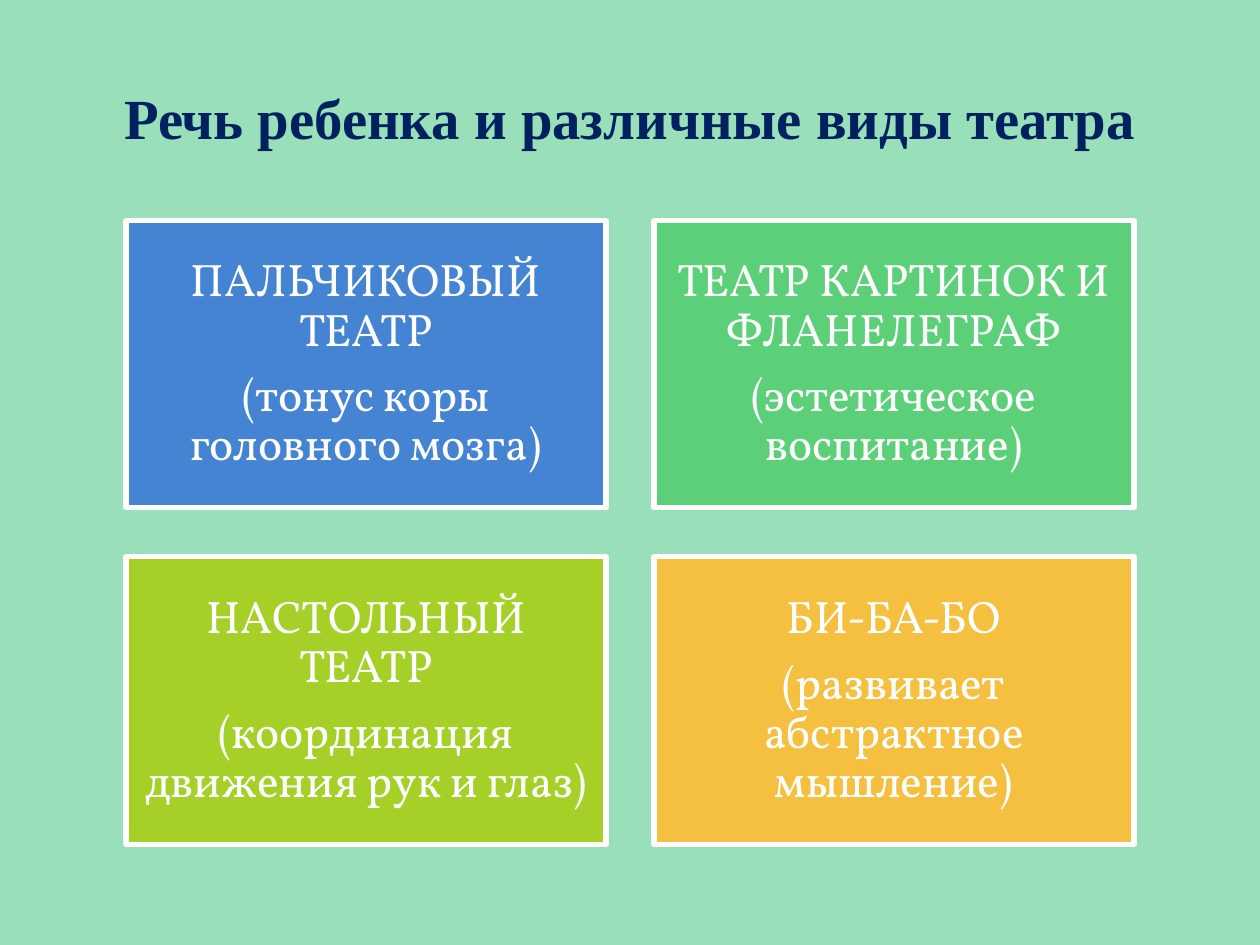
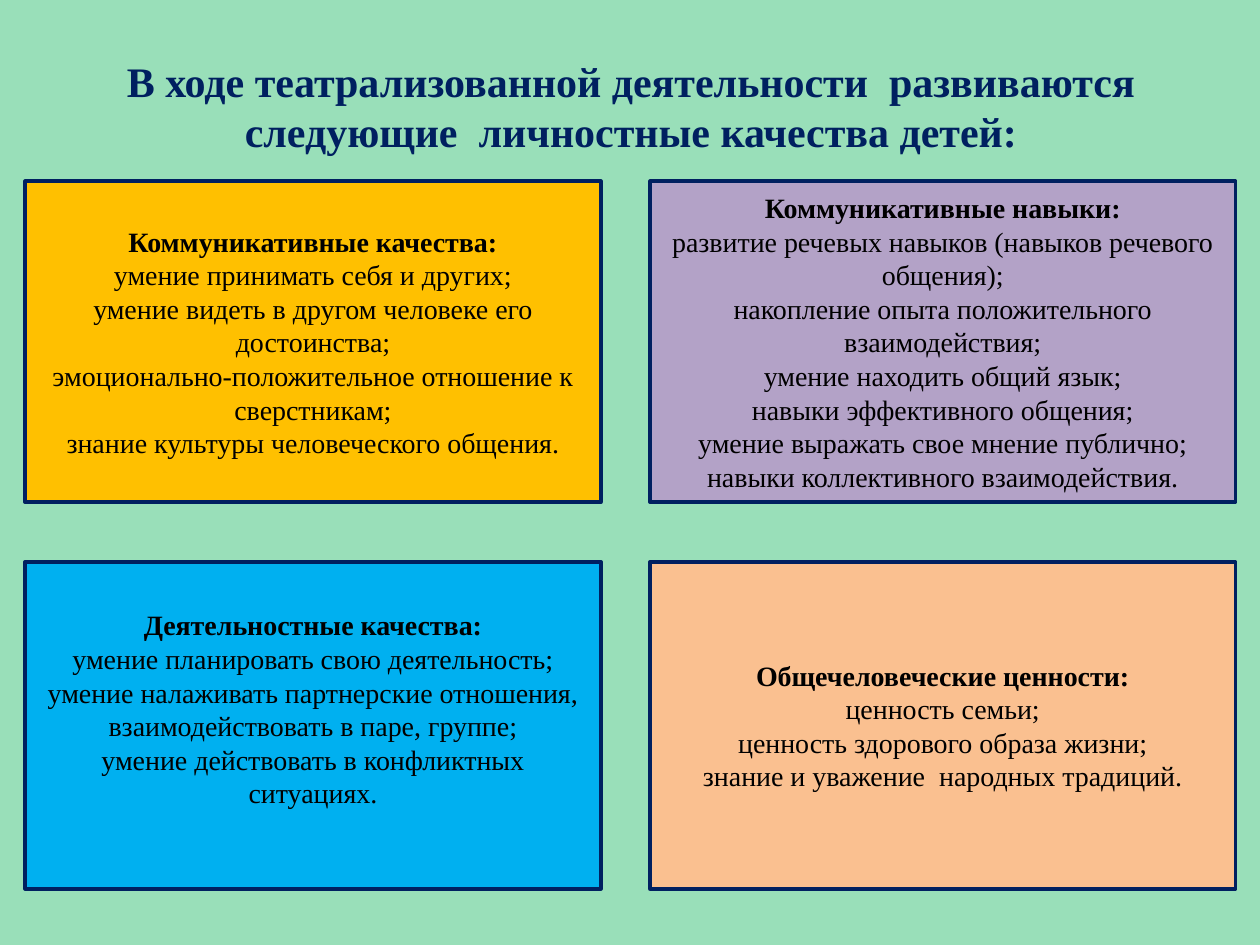
from dataclasses import dataclass
from itertools import product

from pptx import Presentation
from pptx.dml.color import RGBColor
from pptx.enum.shapes import MSO_SHAPE as Shape
from pptx.enum.text import MSO_ANCHOR as Anchor, PP_ALIGN as Align
from pptx.util import Pt


@dataclass(frozen=True)
class Theme:
    background: str = "99DFB9"
    navy: str = "002060"
    white: str = "FFFFFF"
    black: str = "000000"
    serif: str = "Times New Roman"
    card_font: str = "Vollkorn"
    main_title_size: float = 32.4
    long_title_size: float = 24
    card_size: float = 26
    list_size: float = 16


THEME = Theme()

THEATRES = [
    ("4584D3", "ПАЛЬЧИКОВЫЙ ТЕАТР", "(тонус коры головного мозга)"),
    ("5BD078", "ТЕАТР КАРТИНОК И ФЛАНЕЛЕГРАФ", "(эстетическое воспитание)"),
    ("A5D028", "НАСТОЛЬНЫЙ ТЕАТР", "(координация движения рук и глаз)"),
    ("F5C040", "БИ-БА-БО", "(развивает абстрактное мышление)"),
]

# Fill, extra bottom inset, heading, items
QUALITIES = [
    ("FFC000", 0, "Коммуникативные качества:", [
        "умение принимать себя и других;",
        "умение видеть в другом человеке его достоинства;",
        "эмоционально-положительное отношение к сверстникам;",
        "знание культуры человеческого общения."]),
    ("B3A2C7", 0, "Коммуникативные навыки:", [
        "развитие речевых навыков (навыков речевого общения);",
        "накопление опыта положительного взаимодействия;",
        "умение находить общий язык;",
        "навыки эффективного общения;",
        "умение выражать свое мнение публично;",
        "навыки коллективного взаимодействия."]),
    ("00B0F0", 19, "Деятельностные качества:", [
        "умение планировать свою деятельность;",
        "умение налаживать партнерские отношения, взаимодействовать в паре, группе;",
        "умение действовать в конфликтных ситуациях."]),
    ("FAC090", 0, "Общечеловеческие ценности:", [
        "ценность семьи;",
        "ценность здорового образа жизни;",
        "знание и уважение  народных традиций."]),
]


def rgb(code):
    return RGBColor.from_string(code)


def write(frame, lines, *, size, color, font=THEME.serif, bold_lines=0,
          insets=(7.2, 3.6, 7.2, 3.6), spacing=None, after=0):
    """Fill a frame with centred lines; the first bold_lines of them are bold."""
    frame.word_wrap = True
    frame.vertical_anchor = Anchor.MIDDLE
    (frame.margin_left, frame.margin_top,
     frame.margin_right, frame.margin_bottom) = map(Pt, insets)
    for index, line in enumerate(lines):
        paragraph = frame.paragraphs[0] if index == 0 else frame.add_paragraph()
        paragraph.alignment = Align.CENTER
        paragraph.space_after = Pt(after)
        if spacing:
            paragraph.line_spacing = spacing
        run = paragraph.add_run()
        run.text = line
        run.font.name = font
        run.font.size = Pt(size)
        run.font.bold = index < bold_lines
        run.font.color.rgb = rgb(color)


def add_titled_slide(deck, title, box, size):
    slide = deck.slides.add_slide(deck.slide_layouts[6])
    slide.background.fill.solid()
    slide.background.fill.fore_color.rgb = rgb(THEME.background)
    heading = slide.shapes.add_textbox(*map(Pt, box))
    write(heading.text_frame, [title], size=size, color=THEME.navy, bold_lines=1)
    return slide


def add_panel(slide, box, fill, border, border_width):
    panel = slide.shapes.add_shape(Shape.RECTANGLE, *map(Pt, box))
    panel.shadow.inherit = False
    panel.fill.solid()
    panel.fill.fore_color.rgb = rgb(fill)
    panel.line.color.rgb = rgb(border)
    panel.line.width = Pt(border_width)
    return panel.text_frame


def grid(columns, rows):
    """Boxes, row by row, from (left, width) columns and (top, height) rows."""
    return [(left, top, width, height)
            for (top, height), (left, width) in product(rows, columns)]


def build_theatres(deck):
    slide = add_titled_slide(deck, "Речь ребенка и различные виды театра",
                             (36, 21.6, 648, 90), THEME.main_title_size)
    boxes = grid([(72, 274.3), (373.7, 274.3)], [(126, 164.2), (318.2, 164.2)])
    for box, (fill, *lines) in zip(boxes, THEATRES):
        frame = add_panel(slide, box, fill, THEME.white, 3)
        write(frame, lines, size=THEME.card_size, color=THEME.white,
              font=THEME.card_font, insets=(7.8,) * 4, spacing=0.9, after=9.5)


def build_qualities(deck):
    slide = add_titled_slide(
        deck, "В ходе театрализованной деятельности  развиваются "
        "следующие  личностные качества детей:",
        (36.6, 21, 648, 79), THEME.long_title_size)
    boxes = grid([(14.4, 329), (371.5, 334.5)], [(103.5, 183.5), (321, 187)])
    for box, (fill, lift, heading, items) in zip(boxes, QUALITIES):
        frame = add_panel(slide, box, fill, THEME.navy, 2)
        write(frame, [heading, *items], size=THEME.list_size, color=THEME.black,
              bold_lines=1, insets=(7.2, 3.6, 7.2, 3.6 + lift))


def main():
    deck = Presentation()
    deck.slide_width, deck.slide_height = Pt(720), Pt(540)
    build_theatres(deck)
    build_qualities(deck)
    deck.save("out.pptx")


if __name__ == "__main__":
    main()
